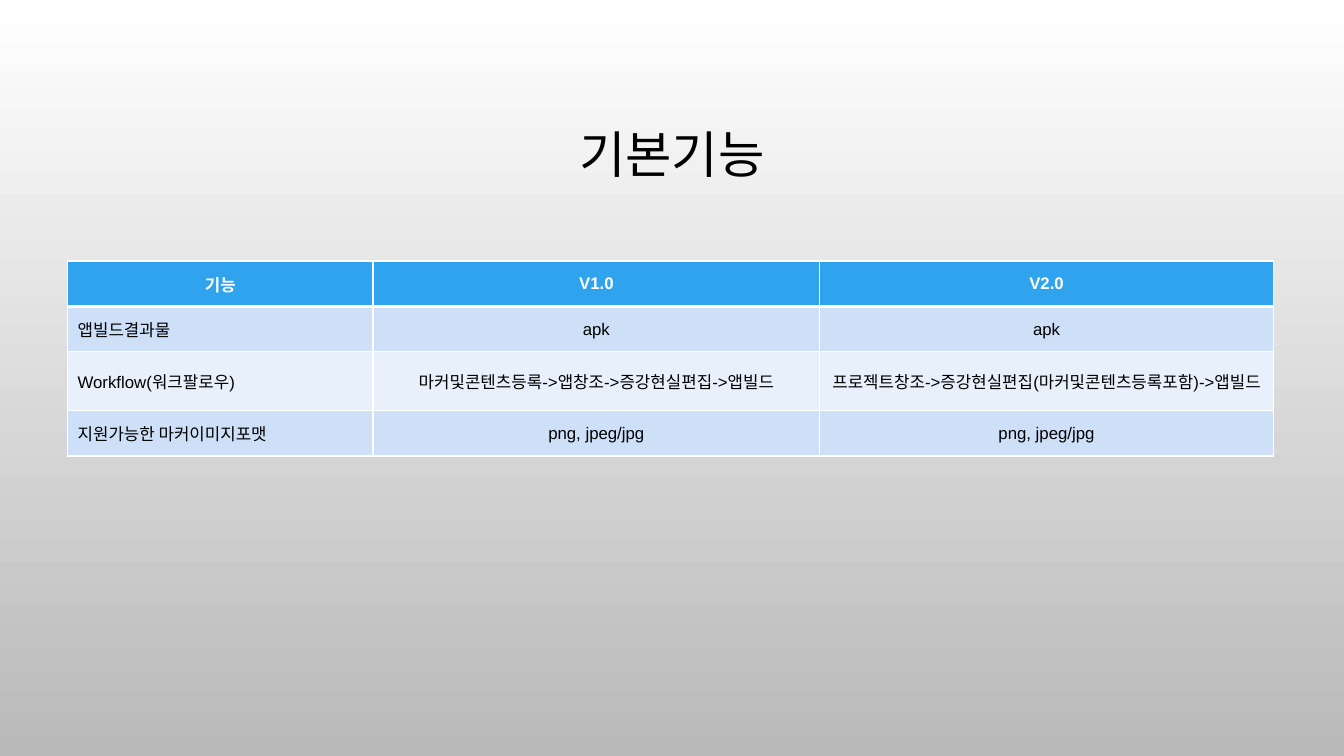
from dataclasses import dataclass

from lxml.etree import SubElement
from pptx import Presentation
from pptx.dml.color import RGBColor
from pptx.enum.text import MSO_ANCHOR, PP_ALIGN
from pptx.oxml.ns import qn
from pptx.util import Inches, Pt


@dataclass(frozen=True)
class Theme:
    """Colours, fonts and type sizes of the slide."""
    background: tuple = ("FFFFFF", "B9B9B9")
    header: str = "2FA3EE"
    bands: tuple = ("CDE0F8", "E8F0FC")
    border: str = "FFFFFF"
    light: str = "FFFFFF"
    dark: str = "000000"
    title_font: str = "Calibri"
    table_font: str = "Arial"
    title_size: int = 36
    table_size: int = 12
    thin: int = 1
    thick: int = 3


THEME = Theme()
COLUMN_WIDTHS = (3.03, 4.43, 4.5)
ROW_HEIGHT = 0.45
FEATURES = (
    ("기능", "V1.0", "V2.0"),
    ("앱빌드결과물", "apk", "apk"),
    ("Workflow(워크팔로우)",
     "마커및콘텐츠등록->앱창조->증강현실편집->앱빌드",
     "프로젝트창조->증강현실편집(마커및콘텐츠등록포함)->앱빌드"),
    ("지원가능한 마커이미지포맷", "png, jpeg/jpg", "png, jpeg/jpg"),
)


def apply_format(obj, values):
    """Set each named attribute of an object."""
    for name, value in values.items():
        setattr(obj, name, value)


def write_text(tf, text, align, color, font):
    """Write one formatted paragraph, centred vertically."""
    tf.vertical_anchor = MSO_ANCHOR.MIDDLE
    p = tf.paragraphs[0]
    p.alignment = align
    r = p.add_run()
    r.text = text
    apply_format(r.font, font)
    r.font.color.rgb = RGBColor.from_string(color)
    return p


def set_background(slide):
    """Fill the background with a vertical gradient."""
    fill = slide.background.fill
    fill.gradient()
    fill.gradient_angle = 270
    for stop, color in zip(fill.gradient_stops, THEME.background):
        stop.color.rgb = RGBColor.from_string(color)


def add_title(slide, text):
    """Place and format the title."""
    sp = slide.shapes.title
    apply_format(sp, {"left": Inches(1), "top": Inches(0.68),
                      "width": Inches(11.33), "height": Inches(1.75)})
    p = write_text(sp.text_frame, text, PP_ALIGN.CENTER, THEME.dark,
                   {"name": THEME.title_font, "size": Pt(THEME.title_size)})
    p.line_spacing = 0.9


def set_borders(cell, top, bottom):
    """Draw the four borders of a cell."""
    tcPr = cell._tc.get_or_add_tcPr()
    widths = {"L": THEME.thin, "R": THEME.thin, "T": top, "B": bottom}
    for side, width in widths.items():
        ln = SubElement(tcPr, qn(f"a:ln{side}"), w=str(Pt(width)))
        fill = SubElement(ln, qn("a:solidFill"))
        SubElement(fill, qn("a:srgbClr"), val=THEME.border)


def format_cell(cell, text, row, column):
    """Fill, border and write one cell according to its place."""
    is_header = row == 0
    set_borders(cell, THEME.thick if row == 1 else THEME.thin,
                THEME.thick if is_header else THEME.thin)
    cell.fill.solid()
    fill = THEME.header if is_header else THEME.bands[(row - 1) % 2]
    cell.fill.fore_color.rgb = RGBColor.from_string(fill)
    cell.vertical_anchor = MSO_ANCHOR.MIDDLE
    centred = is_header or column > 0
    write_text(cell.text_frame, text,
               PP_ALIGN.CENTER if centred else PP_ALIGN.LEFT,
               THEME.light if is_header else THEME.dark,
               {"name": THEME.table_font, "size": Pt(THEME.table_size),
                "bold": is_header})


def add_feature_table(slide, rows):
    """Add the table that compares the versions."""
    table = slide.shapes.add_table(
        len(rows), len(COLUMN_WIDTHS), Inches(0.67), Inches(2.59),
        Inches(sum(COLUMN_WIDTHS)), Inches(ROW_HEIGHT * len(rows))).table
    for column, width in zip(table.columns, COLUMN_WIDTHS):
        column.width = Inches(width)
    for i, texts in enumerate(rows):
        table.rows[i].height = Inches(ROW_HEIGHT)
        for j, text in enumerate(texts):
            format_cell(table.cell(i, j), text, i, j)


def main():
    """Build and save the slide."""
    prs = Presentation()
    apply_format(prs, {"slide_width": Inches(13.33), "slide_height": Inches(7.5)})
    slide = prs.slides.add_slide(prs.slide_layouts[5])
    set_background(slide)
    add_title(slide, "기본기능")
    add_feature_table(slide, FEATURES)
    prs.save("out.pptx")


if __name__ == "__main__":
    main()
